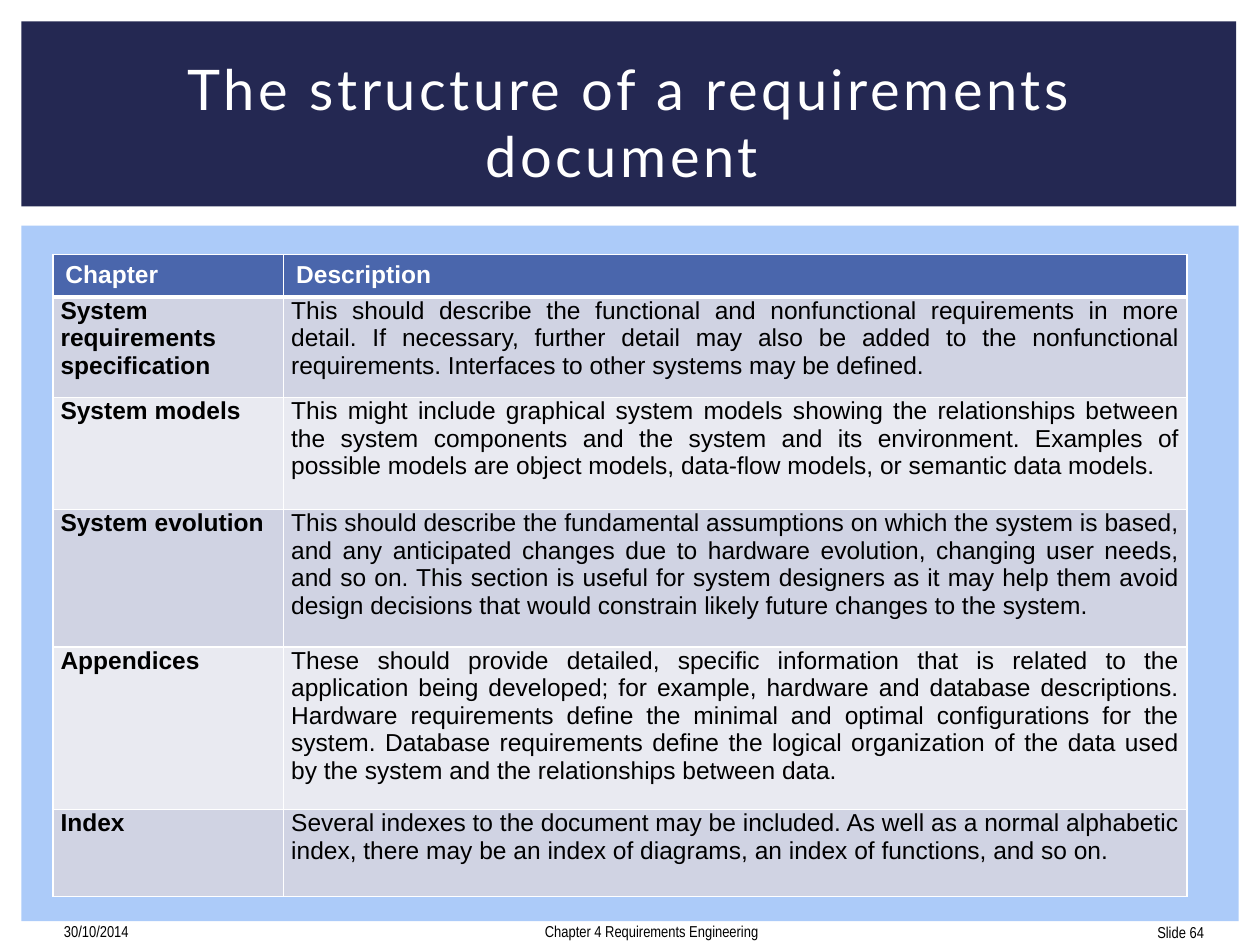
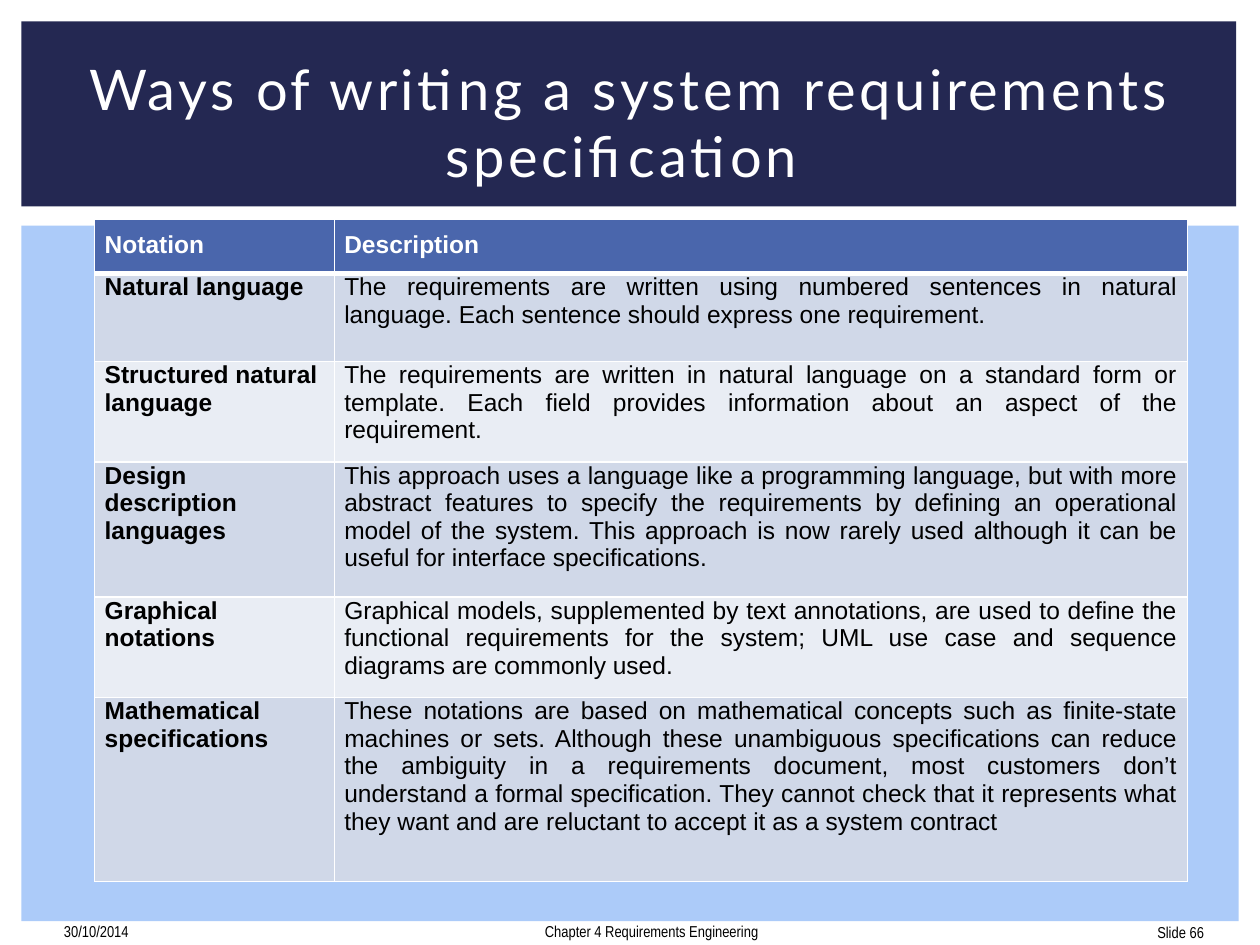
from itertools import product

from lxml.etree import SubElement
from pptx import Presentation
from pptx.dml.color import RGBColor
from pptx.enum.shapes import MSO_SHAPE
from pptx.enum.text import MSO_ANCHOR, MSO_AUTO_SIZE, PP_ALIGN
from pptx.oxml.ns import qn
from pptx.util import Cm, Pt

COLOURS = {
    "band": "242852",
    "panel": "ACCBF9",
    "header": "4A66AC",
    "white": "FFFFFF",
    "black": "000000",
}

# Lengths are centimetres: left, top, width, height
PANEL = (0.43, 4.55, 24.54, 14.02)
BAND = (0.43, 0.43, 24.49, 3.73)
TITLE = (1.07, 0.99, 23.29, 2.92)
DATE = (1.04, 18.39, 5.92, 0.76)
FOOTER = (1.07, 18.39, 24.13, 0.76)
NUMBER = (22.89, 18.42, 1.63, 0.76)

TITLE_FONT = {"name": "Lato", "size": Pt(32), "bold": False}
FOOTER_FONT = {"name": "Arial Narrow", "size": Pt(9)}
TABLE_FONT = {"name": "Arial", "size": Pt(14)}

STRUCTURE = {
    "place": (1.07, 5.13),
    "columns": (4.65, 18.21),
    "rows": (0.79, 1.95, 2.26, 2.77, 3.28, 1.75),
    "stripes": ("D0D3E3", "E9EAF1"),
    "header_margins": (0.25, 0.13),
    "side_margin": 0.15,
    "label_align": PP_ALIGN.JUSTIFY,
    "cells": [
        ("Chapter", "Description"),
        ("System requirements specification",
         "This should describe the functional and nonfunctional requirements in more "
         "detail. If necessary, further detail may also be added to the nonfunctional "
         "requirements. Interfaces to other systems may be defined."),
        ("System models",
         "This might include graphical system models showing the relationships between "
         "the system components and the system and its environment. Examples of "
         "possible models are object models, data-flow models, or semantic data models. "),
        ("System evolution",
         "This should describe the fundamental assumptions on which the system is based, "
         "and any anticipated changes due to hardware evolution, changing user needs, "
         "and so on. This section is useful for system designers as it may help them "
         "avoid design decisions that would constrain likely future changes to the "
         "system."),
        ("Appendices",
         "These should provide detailed, specific information that is related to the "
         "application being developed; for example, hardware and database descriptions. "
         "Hardware requirements define the minimal and optimal configurations for the "
         "system. Database requirements define the logical organization of the data used "
         "by the system and the relationships between data. "),
        ("Index",
         "Several indexes to the document may be included. As well as a normal alphabetic "
         "index, there may be an index of diagrams, an index of functions, and so on."),
    ],
}

NOTATIONS = {
    "place": (1.91, 4.42),
    "columns": (4.83, 17.2),
    "rows": (1.03, 1.77, 1.91, 2.72, 1.91, 3.71),
    "stripes": ("D0D8E8", "E9EDF4"),
    "header_margins": (0.2, 0.25),
    "side_margin": 0.2,
    "label_align": PP_ALIGN.LEFT,
    "cells": [
        ("Notation", "Description"),
        ("Natural language",
         "The requirements are written using numbered sentences in natural language. "
         "Each sentence should express one requirement."),
        ("Structured natural language",
         "The requirements are written in natural language on a standard form or "
         "template. Each field provides information about an aspect of the requirement."),
        ("Design description languages",
         "This approach uses a language like a programming language, but with more "
         "abstract features to specify the requirements by defining an operational model "
         "of the system. This approach is now rarely used although it can be useful for "
         "interface specifications."),
        ("Graphical notations",
         "Graphical models, supplemented by text annotations, are used to define the "
         "functional requirements for the system; UML use case and sequence diagrams are "
         "commonly used."),
        ("Mathematical specifications",
         "These notations are based on mathematical concepts such as finite-state "
         "machines or sets. Although these unambiguous specifications can reduce the "
         "ambiguity in a requirements document, most customers don’t understand a formal "
         "specification. They cannot check that it represents what they want and are "
         "reluctant to accept it as a system contract"),
    ],
}


def set_values(target, values):
    for name, value in values.items():
        setattr(target, name, value)


class LectureDeck:
    """Holds the style and the current page."""

    def __init__(self):
        self.deck = Presentation()
        set_values(self.deck, {"slide_width": Cm(25.4), "slide_height": Cm(19.05)})
        self.page = None

    def colour(self, name):
        return RGBColor.from_string(COLOURS.get(name, name))

    def add_text(self, frame, text, font, colour, align):
        para = frame.paragraphs[0]
        para.alignment = align
        span = para.add_run()
        span.text = text
        set_values(span.font, font)
        span.font.color.rgb = self.colour(colour)
        return span

    # Page with its bands, title and footers
    def add_page(self, title, number):
        self.page = self.deck.slides.add_slide(self.deck.slide_layouts[5])
        self.band(BAND, "band")
        self.band(PANEL, "panel")
        self.title(title)
        self.label("30/10/2014", DATE, PP_ALIGN.LEFT)
        self.label("Chapter 4 Requirements Engineering", FOOTER, PP_ALIGN.CENTER)
        self.label(f"Slide {number}", NUMBER, PP_ALIGN.RIGHT)

    def band(self, place, colour):
        box = self.page.shapes.add_shape(MSO_SHAPE.RECTANGLE, *map(Cm, place))
        box.shadow.inherit = False
        box.fill.solid()
        box.fill.fore_color.rgb = self.colour(colour)
        box.line.fill.background()
        # Send behind the title placeholder
        box.element.getparent().insert(2, box.element)

    def title(self, text):
        box = self.page.shapes.title
        set_values(box, dict(zip(("left", "top", "width", "height"), map(Cm, TITLE))))
        set_values(box.text_frame, {"word_wrap": True, "auto_size": MSO_AUTO_SIZE.NONE,
                                    "vertical_anchor": MSO_ANCHOR.MIDDLE})
        span = self.add_text(box.text_frame, text, TITLE_FONT, "white", PP_ALIGN.CENTER)
        span._r.get_or_add_rPr().set("spc", "200")

    def label(self, text, place, align):
        box = self.page.shapes.add_textbox(*map(Cm, place))
        set_values(box.text_frame, {"word_wrap": True,
                                    "vertical_anchor": MSO_ANCHOR.MIDDLE})
        self.add_text(box.text_frame, text, FOOTER_FONT, "black", align)

    # Table with a header row and striped rows
    def table(self, place, columns, rows, stripes, header_margins, side_margin,
              label_align, cells):
        size = (sum(columns), sum(rows))
        grid = self.page.shapes.add_table(
            len(rows), len(columns), *map(Cm, place + size)).table
        for column, width in zip(grid.columns, columns):
            column.width = Cm(width)
        for row, height in zip(grid.rows, rows):
            row.height = Cm(height)

        for row, column in product(range(len(rows)), range(len(columns))):
            cell = grid.cell(row, column)
            header = row == 0
            side, top, bottom = ((header_margins[0], header_margins[1], header_margins[1])
                                 if header else (side_margin, 0, 0.25))
            set_values(cell, {"margin_left": Cm(side), "margin_right": Cm(side),
                              "margin_top": Cm(top), "margin_bottom": Cm(bottom),
                              "vertical_anchor": MSO_ANCHOR.TOP})
            self.borders(cell, top=3 if row == 1 else 1, bottom=3 if header else 1)
            cell.fill.solid()
            cell.fill.fore_color.rgb = self.colour(
                "header" if header else stripes[(row - 1) % 2])
            if header:
                align = PP_ALIGN.LEFT
            else:
                align = PP_ALIGN.JUSTIFY if column else label_align
            self.add_text(cell.text_frame, cells[row][column],
                          {**TABLE_FONT, "bold": header or column == 0},
                          "white" if header else "black", align)

    def borders(self, cell, top, bottom):
        properties = cell._tc.get_or_add_tcPr()
        for side, width in {"L": 1, "R": 1, "T": top, "B": bottom}.items():
            line = SubElement(properties, qn(f"a:ln{side}"), w=str(Pt(width)))
            fill = SubElement(line, qn("a:solidFill"))
            SubElement(fill, qn("a:srgbClr"), val=COLOURS["white"])


def main():
    lecture = LectureDeck()

    # Chapters of the requirements document
    lecture.add_page("The structure of a requirements document ", 64)
    lecture.table(**STRUCTURE)

    # Notations for the specification
    lecture.add_page("Ways of writing a system requirements specification ", 66)
    lecture.table(**NOTATIONS)

    lecture.deck.save("out.pptx")


if __name__ == "__main__":
    main()
